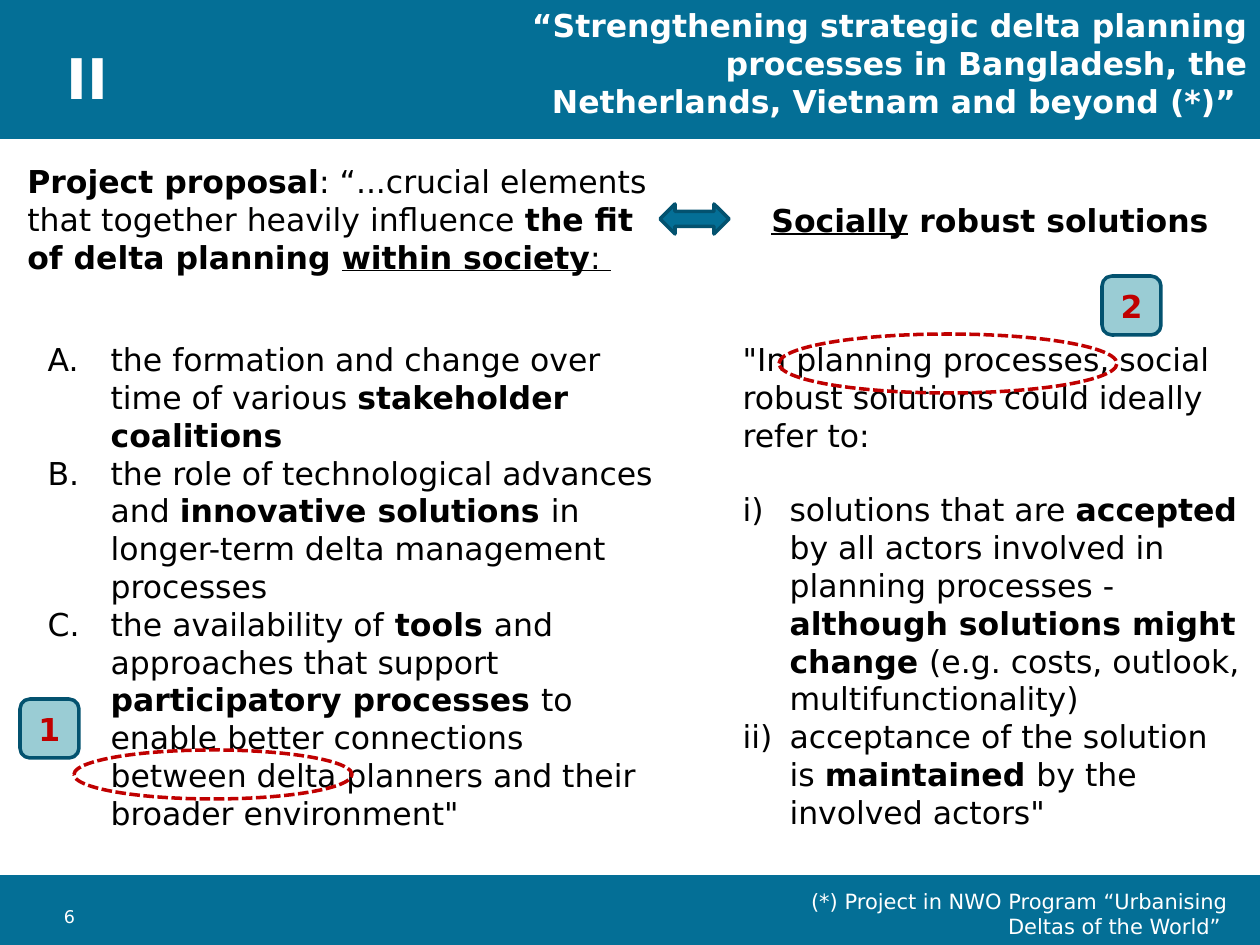
from dataclasses import dataclass

from lxml import etree
from pptx import Presentation
from pptx import util as u
from pptx.dml.color import RGBColor
from pptx.enum import dml, shapes, text
from pptx.oxml.ns import qn

SCALE = u.Inches(1) / 126


def px(n):
    return u.Emu(round(n * SCALE))


@dataclass(frozen=True)
class Theme:
    font: str = "DejaVu Sans"
    bar: str = "046F96"
    edge: str = "03526F"
    badge: str = "9ACCD4"
    mark: str = "C00000"
    ink: str = "000000"
    light: str = "FFFFFF"
    tiny: int = 10
    small: int = 12
    base: int = 18
    large: int = 32


class Deck:
    def __init__(self, theme):
        self.theme = theme
        self.prs = Presentation()
        self.prs.slide_width, self.prs.slide_height = px(1260), px(945)
        self.slide = self.prs.slides.add_slide(self.prs.slide_layouts[3])

    def place(self, shape, box):
        for name, n in zip(("left", "top", "width", "height"), box):
            setattr(shape, name, px(n))

    def para(self, para, runs, size, color, align):
        """Runs are (words, style) pairs; style holds b for bold, u for underline."""
        para.alignment = align
        para.space_before = u.Pt(0)
        for words, style in runs:
            run = para.add_run()
            run.text = words
            form = {"name": self.theme.font, "size": u.Pt(size),
                    "bold": "b" in style, "underline": "u" in style}
            for key, value in form.items():
                setattr(run.font, key, value)
            run.font.color.rgb = RGBColor.from_string(color)

    def frame(self, shape, anchor=text.MSO_ANCHOR.TOP):
        frame = shape.text_frame
        form = {"word_wrap": True, "auto_size": text.MSO_AUTO_SIZE.NONE,
                "vertical_anchor": anchor}
        for key, value in form.items():
            setattr(frame, key, value)
        return frame

    def text(self, box, runs, size=None, color=None, align=text.PP_ALIGN.LEFT):
        shape = self.slide.shapes.add_textbox(*map(px, box))
        self.para(self.frame(shape).paragraphs[0], runs,
                  size or self.theme.base, color or self.theme.ink, align)
        return shape.text_frame

    def title(self, box, words):
        shape = self.slide.shapes.title
        self.place(shape, box)
        self.para(self.frame(shape).paragraphs[0], [(words, "b")],
                  self.theme.base, self.theme.light, text.PP_ALIGN.RIGHT)

    def list(self, index, box, items, kind, indent, intro=None):
        shape = self.slide.placeholders[index]
        self.place(shape, box)
        frame = self.frame(shape)
        rows = ([(intro, False)] if intro else []) + [(i, True) for i in items]
        for n, (runs, listed) in enumerate(rows):
            para = frame.add_paragraph() if n else frame.paragraphs[0]
            self.para(para, runs, self.theme.base, self.theme.ink,
                      text.PP_ALIGN.LEFT)
            if intro and n == 1:
                para.space_before = u.Pt(21)
            props = para._p.get_or_add_pPr()
            step = px(indent) if listed else 0
            props.set("marL", str(step))
            props.set("indent", str(-step))
            if listed:
                etree.SubElement(props, qn("a:buAutoNum"), type=kind)
            else:
                etree.SubElement(props, qn("a:buNone"))

    def shape(self, kind, box, fill=None, line=None, dash=None):
        shape = self.slide.shapes.add_shape(kind, *map(px, box))
        shape.shadow.inherit = False
        for part, color in ((shape.fill, fill), (shape.line.fill, line)):
            if color:
                part.solid()
                part.fore_color.rgb = RGBColor.from_string(color)
            else:
                part.background()
        if line:
            shape.line.width = u.Pt(2)
        if dash:
            shape.line.dash_style = dash
        return shape

    def bar(self, box):
        shape = self.shape(shapes.MSO_SHAPE.RECTANGLE, box, self.theme.bar)
        self.slide.shapes._spTree.insert(2, shape._element)  # to the back

    def ring(self, box):
        self.shape(shapes.MSO_SHAPE.OVAL, box, line=self.theme.mark,
                   dash=dml.MSO_LINE.SQUARE_DOT)

    def badge(self, left, top, label):
        shape = self.shape(shapes.MSO_SHAPE.ROUNDED_RECTANGLE,
                           (left, top, 59, 59), self.theme.badge, self.theme.edge)
        frame = self.frame(shape, text.MSO_ANCHOR.MIDDLE)
        self.para(frame.paragraphs[0], [(label, "b")], self.theme.base,
                  self.theme.mark, text.PP_ALIGN.CENTER)


def main():
    theme = Theme()
    deck = Deck(theme)

    # Header and footer bars
    deck.bar((0, 0, 1260, 139))
    deck.bar((0, 875, 1260, 70))
    deck.title((512, 0, 748, 127),
               "“Strengthening strategic delta planning processes in Bangladesh, "
               "the Netherlands, Vietnam and beyond (*)” ")
    deck.text((54, 37, 139, 81), [("II", "b")], theme.large, theme.light)
    number = deck.text((64, 911, 262, 16), [("6", "")], theme.tiny, theme.light)
    number.vertical_anchor = text.MSO_ANCHOR.BOTTOM
    for side in ("left", "top", "right", "bottom"):
        setattr(number, "margin_" + side, 0)
    deck.text((789, 882, 451, 63),
              [("(*) Project in NWO Program “Urbanising Deltas of the World” ", "")],
              theme.small, theme.light, text.PP_ALIGN.RIGHT)

    # Column headings, joined by the arrow
    deck.text((15, 156, 655, 127), [
        ("Project proposal", "b"),
        (": “...crucial elements that together heavily influence ", ""),
        ("the fit of delta planning ", "b"),
        ("within society", "bu"), (": ", "u")])
    deck.shape(shapes.MSO_SHAPE.LEFT_RIGHT_ARROW, (660, 204, 69, 30),
               theme.bar, theme.edge)
    deck.text((759, 195, 476, 50),
              [("Socially", "bu"), (" robust solutions", "b")])

    # Lists
    deck.list(1, (35, 334, 645, 509), [
        [("the formation and change over time of various ", ""),
         ("stakeholder coalitions", "b")],
        [("the role of technological advances and ", ""),
         ("innovative solutions ", "b"),
         ("in longer-term delta management processes", "")],
        [("the availability of", ""), (" tools ", "b"),
         ("and approaches that support ", ""),
         ("participatory processes ", "b"),
         ("to enable better connections between delta planners and their "
          "broader environment\"", "")],
    ], "alphaUcPeriod", 63)
    deck.list(2, (730, 334, 523, 509), [
        [("solutions that are ", ""), ("accepted ", "b"),
         ("by all actors involved in planning processes - ", ""),
         ("although solutions might change ", "b"),
         ("(e.g. costs, outlook, multifunctionality)", "")],
        [("acceptance of the solution is ", ""), ("maintained ", "b"),
         ("by the involved actors\"", "")],
    ], "romanLcParenR", 47,
        [("\"In planning processes, social robust solutions could ideally "
          "refer to:", "")])

    # Rings and their numbers
    deck.ring((74, 750, 278, 49))
    deck.ring((779, 334, 338, 59))
    deck.badge(20, 699, "1")
    deck.badge(1102, 276, "2")

    deck.prs.save("out.pptx")


if __name__ == "__main__":
    main()
